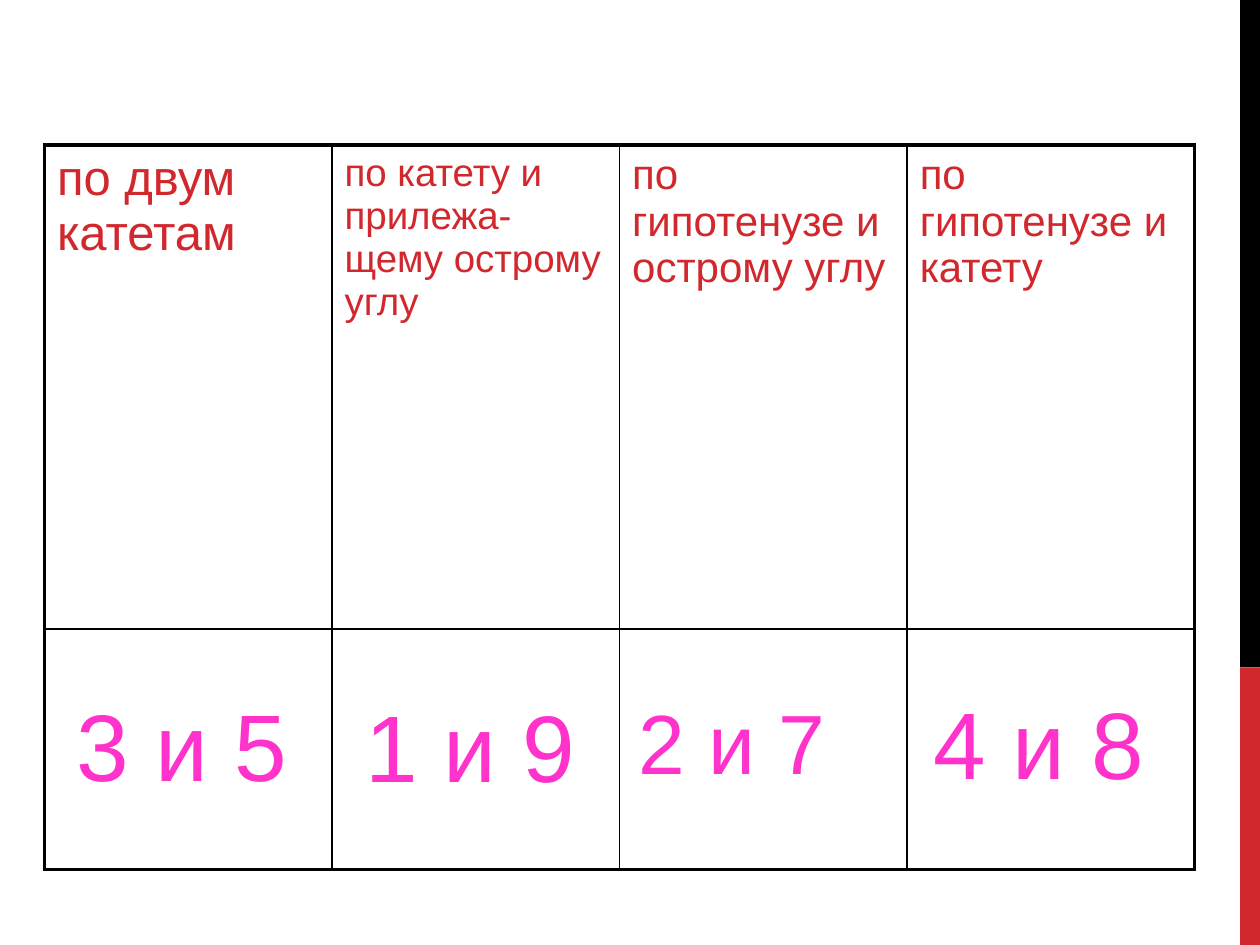
from lxml.etree import SubElement
from pptx import Presentation
from pptx.dml.color import RGBColor
from pptx.enum.shapes import MSO_SHAPE
from pptx.oxml.ns import qn
from pptx.util import Pt

BLACK = RGBColor(0x00, 0x00, 0x00)
RED = RGBColor(0xD1, 0x28, 0x2E)
PINK = RGBColor(0xFF, 0x33, 0xCC)

THIN, THICK = 1, 2.25
PAGE_WIDTH, PAGE_HEIGHT = 720, 540


class PageBuilder:
    """Holds the text style and the page being filled; lengths are points."""

    font_name = "Arial"

    def __init__(self, page):
        self.page = page

    def fill_text(self, frame, text, size, color, space_ratio):
        para = frame.paragraphs[0]
        para.space_before = Pt(size * space_ratio)
        span = para.add_run()
        span.text = text
        style = {"name": self.font_name, "size": Pt(size), "bold": False}
        for key, value in style.items():
            setattr(span.font, key, value)
        span.font.color.rgb = color

    def bar(self, left, top, width, height, color):
        box = self.page.shapes.add_shape(
            MSO_SHAPE.RECTANGLE, Pt(left), Pt(top), Pt(width), Pt(height))
        box.shadow.inherit = False
        box.fill.solid()
        box.fill.fore_color.rgb = color
        box.line.fill.background()

    def text(self, left, top, width, height, text, size, color):
        box = self.page.shapes.add_textbox(
            Pt(left), Pt(top), Pt(width), Pt(height))
        box.text_frame.word_wrap = True
        self.fill_text(box.text_frame, text, size, color, 0.1)

    def border(self, cell, widths):
        # Border lines must come before the fill in the cell properties
        properties = cell._tc.get_or_add_tcPr()
        for index, (side, width) in enumerate(widths.items()):
            line = SubElement(properties, qn(f"a:ln{side}"), w=str(Pt(width)))
            fill = SubElement(line, qn("a:solidFill"))
            SubElement(fill, qn("a:srgbClr"), val=str(BLACK))
            properties.insert(index, line)

    def table(self, left, top, column_width, row_heights, headings, color):
        row_count, column_count = len(row_heights), len(headings)
        table = self.page.shapes.add_table(
            row_count, column_count, Pt(left), Pt(top),
            Pt(column_width * column_count), Pt(sum(row_heights))).table
        for key in ("first_row", "horz_banding"):
            setattr(table, key, False)
        for column in table.columns:
            column.width = Pt(column_width)
        for row, height in zip(table.rows, row_heights):
            row.height = Pt(height)

        # Thick frame, thin inner lines
        for r in range(row_count):
            for c in range(column_count):
                cell = table.cell(r, c)
                cell.fill.background()
                self.border(cell, {
                    "L": THICK if c == 0 else THIN,
                    "R": THICK if c == column_count - 1 else THIN,
                    "T": THICK if r == 0 else THIN,
                    "B": THICK if r == row_count - 1 else THIN,
                })
        for c, (text, size) in enumerate(headings):
            self.fill_text(table.cell(0, c).text_frame, text, size, color, 0.04)


def main():
    deck = Presentation()
    deck.slide_width, deck.slide_height = Pt(PAGE_WIDTH), Pt(PAGE_HEIGHT)
    builder = PageBuilder(deck.slides.add_slide(deck.slide_layouts[6]))

    # Stripe along the right edge
    stripe_left, split = 708.7, 381.3
    stripe_width = PAGE_WIDTH - stripe_left
    builder.bar(stripe_left, split, stripe_width, PAGE_HEIGHT - split, RED)
    builder.bar(stripe_left, 0, stripe_width, split, BLACK)

    # Table of congruence criteria
    headings = [
        ("по двум катетам", 28),
        ("по катету и прилежа-щему острому углу", 22),
        ("по гипотенузе и острому углу", 24),
        ("по гипотенузе и катету", 24),
    ]
    builder.table(25.4, 82.8, 164.35, [276.6, 137.4], headings, RED)

    # Answers over the bottom row
    answers = [
        (36.7, 388.8, 149, 72.7, "3 и 5", 54),
        (201.6, 389.5, 136, 72.7, "1 и 9", 54),
        (357.8, 391, 152.6, 65.5, "2 и 7", 48),
        (526.3, 388.1, 141.8, 72.7, "4 и 8", 54),
    ]
    for answer in answers:
        builder.text(*answer, PINK)

    deck.save("out.pptx")


if __name__ == "__main__":
    main()
